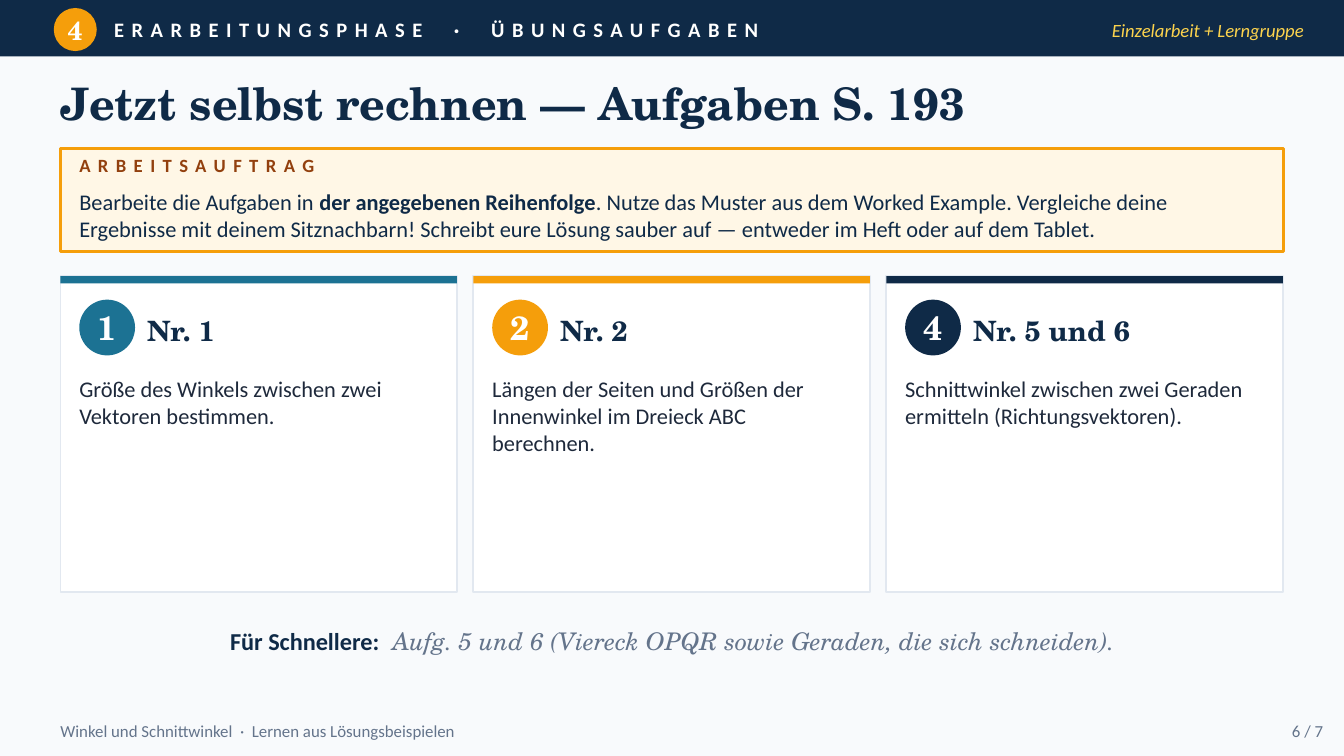
from dataclasses import dataclass

from pptx import Presentation
from pptx.dml.color import RGBColor
from pptx.enum.shapes import MSO_SHAPE
from pptx.enum.text import MSO_ANCHOR, MSO_AUTO_SIZE, PP_ALIGN
from pptx.util import Inches, Pt

# Square grid: 100 columns by 56.25 rows (16:9)
COLUMNS, ROWS = 100, 56.25
CELL = Inches(10) / COLUMNS


@dataclass(frozen=True)
class Theme:
    serif: str = "TeX Gyre Schola"
    sans: str = "Calibri"
    paper: str = "F8FAFC"
    white: str = "FFFFFF"
    navy: str = "0F2A47"
    orange: str = "F59E0B"
    teal: str = "1C7293"
    yellow: str = "FCD34D"
    cream: str = "FFF7E6"
    brown: str = "92400E"
    ink: str = "1E293B"
    grey: str = "64748B"
    border: str = "E2E8F0"
    title: int = 24
    number: int = 18
    heading: int = 15
    step: int = 14
    extra: int = 13
    body: int = 12
    band: int = 11
    label: int = 10
    footer: int = 9


THEME = Theme()


@dataclass(frozen=True)
class Box:
    left: float
    top: float
    width: float
    height: float

    def inner(self, left, top, width, height):
        """Box placed relative to this one's upper left corner."""
        return Box(self.left + left, self.top + top, width, height)

    def emu(self):
        return [round(n * CELL) for n in (self.left, self.top, self.width, self.height)]


@dataclass(frozen=True)
class Style:
    size: int
    color: str
    font: str = THEME.sans
    bold: bool = False
    italic: bool = False
    spacing: int = 0


def write(shape, spans, align=PP_ALIGN.LEFT, anchor=MSO_ANCHOR.MIDDLE, wrap=True):
    """Fill a shape with one paragraph made of (text, style) spans."""
    frame = shape.text_frame
    frame.margin_left = frame.margin_top = frame.margin_right = frame.margin_bottom = 0
    frame.word_wrap = wrap
    frame.auto_size = MSO_AUTO_SIZE.NONE
    frame.vertical_anchor = anchor
    para = frame.paragraphs[0]
    para.alignment = align
    for text, style in spans:
        span = para.add_run()
        span.text = text
        font = span.font
        font.name, font.size = style.font, Pt(style.size)
        font.bold, font.italic = style.bold, style.italic
        font.color.rgb = RGBColor.from_string(style.color)
        if style.spacing:
            span._r.get_or_add_rPr().set("spc", str(style.spacing * 100))


def add_text(page, box, spans, **layout):
    write(page.shapes.add_textbox(*box.emu()), spans, **layout)


def add_panel(page, box, fill, line=None, weight=1, kind=MSO_SHAPE.RECTANGLE):
    panel = page.shapes.add_shape(kind, *box.emu())
    panel.shadow.inherit = False
    panel.fill.solid()
    panel.fill.fore_color.rgb = RGBColor.from_string(fill)
    if line:
        panel.line.color.rgb = RGBColor.from_string(line)
        panel.line.width = Pt(weight)
    else:
        panel.line.fill.background()
    return panel


def add_badge(page, box, number, fill, size):
    badge = add_panel(page, box, fill, kind=MSO_SHAPE.OVAL)
    write(badge, [(number, Style(size, THEME.white, THEME.serif, bold=True))],
          align=PP_ALIGN.CENTER, wrap=False)


def add_band(page, box, step, phase, mode):
    add_panel(page, box, THEME.navy)
    add_badge(page, box.inner(4, 0.6, 3.2, 3.2), step, THEME.orange, THEME.step)
    add_text(page, box.inner(8.5, 0.6, 65, 3.2),
             [(phase, Style(THEME.band, THEME.white, bold=True, spacing=4))])
    add_text(page, box.inner(74, 0.6, 23, 3.2),
             [(mode, Style(THEME.label, THEME.yellow, italic=True))], align=PP_ALIGN.RIGHT)


def add_title(page, box, text):
    title = page.shapes.title
    title.left, title.top, title.width, title.height = box.emu()
    write(title, [(text, Style(THEME.title, THEME.navy, THEME.serif, bold=True))])


def add_task(page, box, label, spans):
    add_panel(page, box, THEME.cream, THEME.orange, 1.5)
    add_text(page, box.inner(1.4, 0.4, 86.4, 2.2),
             [(label, Style(THEME.label, THEME.brown, bold=True, spacing=4))],
             anchor=MSO_ANCHOR.TOP)
    add_text(page, box.inner(1.4, 2.95, 87.5, 4.4),
             [(text, Style(THEME.body, THEME.navy, bold=bold)) for text, bold in spans],
             anchor=MSO_ANCHOR.TOP)


def add_card(page, box, number, heading, body, accent):
    add_panel(page, box, THEME.white, THEME.border)
    add_panel(page, box.inner(0, 0, box.width, 0.55), accent)
    add_badge(page, box.inner(1.4, 1.75, 4.15, 4.15), number, accent, THEME.number)
    add_text(page, box.inner(6.45, 1.95, 22, 4.2),
             [(heading, Style(THEME.heading, THEME.navy, THEME.serif, bold=True))])
    add_text(page, box.inner(1.4, 7.35, box.width - 2.8, 15.3),
             [(body, Style(THEME.body, THEME.ink))], anchor=MSO_ANCHOR.TOP)


def add_cards(page, box, cards, card_width=29.5):
    """Spread equal cards over the full width of the box."""
    pitch = (box.width - card_width) / (len(cards) - 1)
    for index, card in enumerate(cards):
        add_card(page, box.inner(index * pitch, 0, card_width, box.height), *card)


def add_extra(page, box, label, text):
    add_text(page, box, [
        (label, Style(THEME.extra, THEME.navy, bold=True)),
        (text, Style(THEME.extra, THEME.grey, THEME.serif, italic=True)),
    ], align=PP_ALIGN.CENTER)


def add_footer(page, box, topic, number):
    style = Style(THEME.footer, THEME.grey)
    add_text(page, box.inner(0, 0, 60, box.height), [(topic, style)])
    add_text(page, box.inner(box.width - 6.6, 0, 6.6, box.height), [(number, style)],
             align=PP_ALIGN.RIGHT)


def main():
    deck = Presentation()
    deck.slide_width, deck.slide_height = round(COLUMNS * CELL), round(ROWS * CELL)
    page = deck.slides.add_slide(deck.slide_layouts[5])
    page.background.fill.solid()
    page.background.fill.fore_color.rgb = RGBColor.from_string(THEME.paper)

    add_band(page, Box(0, 0, COLUMNS, 4.2), "4",
             "ERARBEITUNGSPHASE  ·  ÜBUNGSAUFGABEN", "Einzelarbeit + Lerngruppe")
    add_title(page, Box(4.5, 4.9, 90, 5.5), "Jetzt selbst rechnen — Aufgaben S. 193")
    add_task(page, Box(4.5, 11.05, 91, 7.65), "ARBEITSAUFTRAG", [
        ("Bearbeite die Aufgaben in ", False),
        ("der angegebenen Reihenfolge", True),
        (". Nutze das Muster aus dem Worked Example. Vergleiche deine Ergebnisse mit "
         "deinem Sitznachbarn! Schreibt eure Lösung sauber auf — entweder im Heft oder "
         "auf dem Tablet.", False),
    ])
    add_cards(page, Box(4.5, 20.55, 90.95, 23.5), [
        ("1", "Nr. 1", "Größe des Winkels zwischen zwei Vektoren bestimmen.", THEME.teal),
        ("2", "Nr. 2", "Längen der Seiten und Größen der Innenwinkel im Dreieck ABC "
         "berechnen.", THEME.orange),
        ("4", "Nr. 5 und 6", "Schnittwinkel zwischen zwei Geraden ermitteln "
         "(Richtungsvektoren).", THEME.navy),
    ])
    add_extra(page, Box(4.5, 45.6, 91, 4.2), "Für Schnellere:",
              "  Aufg. 5 und 6 (Viereck OPQR sowie Geraden, die sich schneiden).")
    add_footer(page, Box(4.5, 53.3, 93.95, 2.2),
               "Winkel und Schnittwinkel  ·  Lernen aus Lösungsbeispielen", "6 / 7")
    deck.save("out.pptx")


if __name__ == "__main__":
    main()
